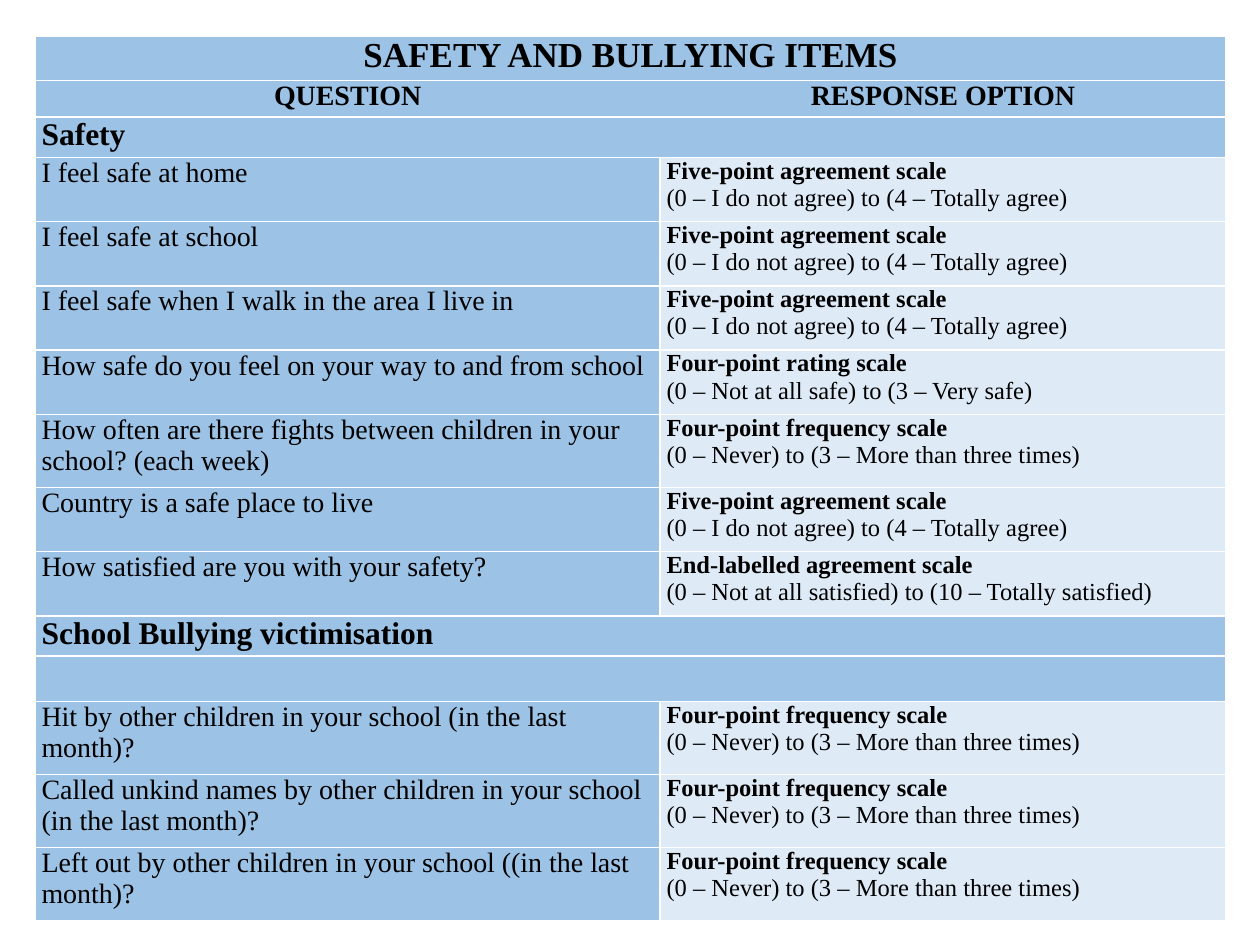
from dataclasses import dataclass

from lxml import etree
from pptx import Presentation
from pptx.dml.color import RGBColor
from pptx.enum.text import PP_ALIGN
from pptx.oxml.ns import qn
from pptx.util import Inches, Pt

LEFT, CENTER = PP_ALIGN.LEFT, PP_ALIGN.CENTER
BLANK_LAYOUT = 6


@dataclass(frozen=True)
class Theme:
    font: str = "Times New Roman"
    text: str = "000000"
    border: str = "FFFFFF"
    main_fill: str = "9CC2E5"
    response_fill: str = "DEEAF6"
    title_size: int = 20
    section_size: int = 18
    question_size: int = 16
    response_size: int = 14


THEME = Theme()
COLUMN_WIDTHS = (4.96, 4.49)
TITLE_HEIGHT, HEADING_HEIGHT, SECTION_HEIGHT, SPACER_HEIGHT = 0.35, 0.29, 0.32, 0.36
ONE_LINE_HEIGHT, TWO_LINE_HEIGHT = 0.51, 0.58

AGREEMENT = ("Five-point agreement scale", "(0 – I do not agree) to (4 – Totally agree)")
RATING = ("Four-point rating scale", "(0 – Not at all safe) to (3 – Very safe)")
FREQUENCY = ("Four-point frequency scale", "(0 – Never) to (3 – More than three times)")
SATISFACTION = ("End-labelled agreement scale",
                "(0 – Not at all satisfied) to (10 – Totally satisfied)")

SAFETY_ITEMS = [
    ("I feel safe at home", AGREEMENT, ONE_LINE_HEIGHT),
    ("I feel safe at school", AGREEMENT, ONE_LINE_HEIGHT),
    ("I feel safe when I walk in the area I live in", AGREEMENT, ONE_LINE_HEIGHT),
    ("How safe do you feel on your way to and from school", RATING, ONE_LINE_HEIGHT),
    ("How often are there fights between children in your school? (each week)",
     FREQUENCY, TWO_LINE_HEIGHT),
    ("Country is a safe place to live", AGREEMENT, ONE_LINE_HEIGHT),
    ("How satisfied are you with your safety?", SATISFACTION, ONE_LINE_HEIGHT),
]
BULLYING_ITEMS = [
    ("Hit by other children in your school (in the last month)?",
     FREQUENCY, TWO_LINE_HEIGHT),
    ("Called unkind names by other children in your school (in the last month)?",
     FREQUENCY, TWO_LINE_HEIGHT),
    ("Left out by other children in your school ((in the last month)?",
     FREQUENCY, TWO_LINE_HEIGHT),
]


def write_text(paragraph, text, *, size, bold=False, align=LEFT):
    paragraph.alignment = align
    run = paragraph.add_run()
    run.text = text
    run.font.name = THEME.font
    run.font.size = Pt(size)
    run.font.bold = bold
    run.font.color.rgb = RGBColor.from_string(THEME.text)


def set_borders(cell, sides):
    """Draw 1 pt borders on the given sides (any of L, R, T, B); clear the others."""
    properties = cell._tc.get_or_add_tcPr()
    for side in "LRTB":
        line = etree.SubElement(properties, qn(f"a:ln{side}"), w=str(Pt(1)))
        if side in sides:
            fill = etree.SubElement(line, qn("a:solidFill"))
            etree.SubElement(fill, qn("a:srgbClr"), val=THEME.border)
        else:
            etree.SubElement(line, qn("a:noFill"))


def style_cell(cell, fill=THEME.main_fill, sides="LRTB"):
    set_borders(cell, sides)
    cell.fill.solid()
    cell.fill.fore_color.rgb = RGBColor.from_string(fill)
    cell.margin_left = cell.margin_right = Inches(0.05)
    cell.margin_top = cell.margin_bottom = 0


def fill_band(row, text="", **text_format):
    """Merge the row into one full-width cell."""
    question, response = row.cells
    question.merge(response)
    style_cell(question)
    style_cell(response)
    if text:
        write_text(question.text_frame.paragraphs[0], text, **text_format)


def fill_headings(row):
    headings = (("QUESTION", "LTB"), ("RESPONSE OPTION", "RTB"))
    for cell, (text, sides) in zip(row.cells, headings):
        style_cell(cell, sides=sides)
        write_text(cell.text_frame.paragraphs[0], text,
                   size=THEME.question_size, bold=True, align=CENTER)


def fill_item(row, question_text, scale):
    question, response = row.cells
    style_cell(question)
    write_text(question.text_frame.paragraphs[0], question_text, size=THEME.question_size)
    style_cell(response, THEME.response_fill)
    name, limits = scale
    frame = response.text_frame
    write_text(frame.paragraphs[0], name, size=THEME.response_size, bold=True)
    write_text(frame.add_paragraph(), limits, size=THEME.response_size)


def fill_items(rows, items):
    for question_text, scale, height in items:
        row = next(rows)
        row.height = Inches(height)
        fill_item(row, question_text, scale)


def add_items_table(slide):
    row_count = 5 + len(SAFETY_ITEMS) + len(BULLYING_ITEMS)
    table = slide.shapes.add_table(row_count, len(COLUMN_WIDTHS), Inches(0.28),
                                   Inches(0.29), Inches(9.45), Inches(7.01)).table
    table.first_row = table.horz_banding = False
    for column, width in zip(table.columns, COLUMN_WIDTHS):
        column.width = Inches(width)
    return table


def next_row(rows, height):
    row = next(rows)
    row.height = Inches(height)
    return row


def main():
    presentation = Presentation()
    presentation.slide_width, presentation.slide_height = Inches(10), Inches(7.5)
    slide = presentation.slides.add_slide(presentation.slide_layouts[BLANK_LAYOUT])
    rows = iter(add_items_table(slide).rows)
    section_format = {"size": THEME.section_size, "bold": True}

    fill_band(next_row(rows, TITLE_HEIGHT), "SAFETY AND BULLYING ITEMS",
              size=THEME.title_size, bold=True, align=CENTER)
    fill_headings(next_row(rows, HEADING_HEIGHT))
    fill_band(next_row(rows, SECTION_HEIGHT), "Safety", **section_format)
    fill_items(rows, SAFETY_ITEMS)
    fill_band(next_row(rows, SECTION_HEIGHT), "School Bullying victimisation",
              **section_format)
    fill_band(next_row(rows, SPACER_HEIGHT))
    fill_items(rows, BULLYING_ITEMS)
    presentation.save("out.pptx")


if __name__ == "__main__":
    main()
